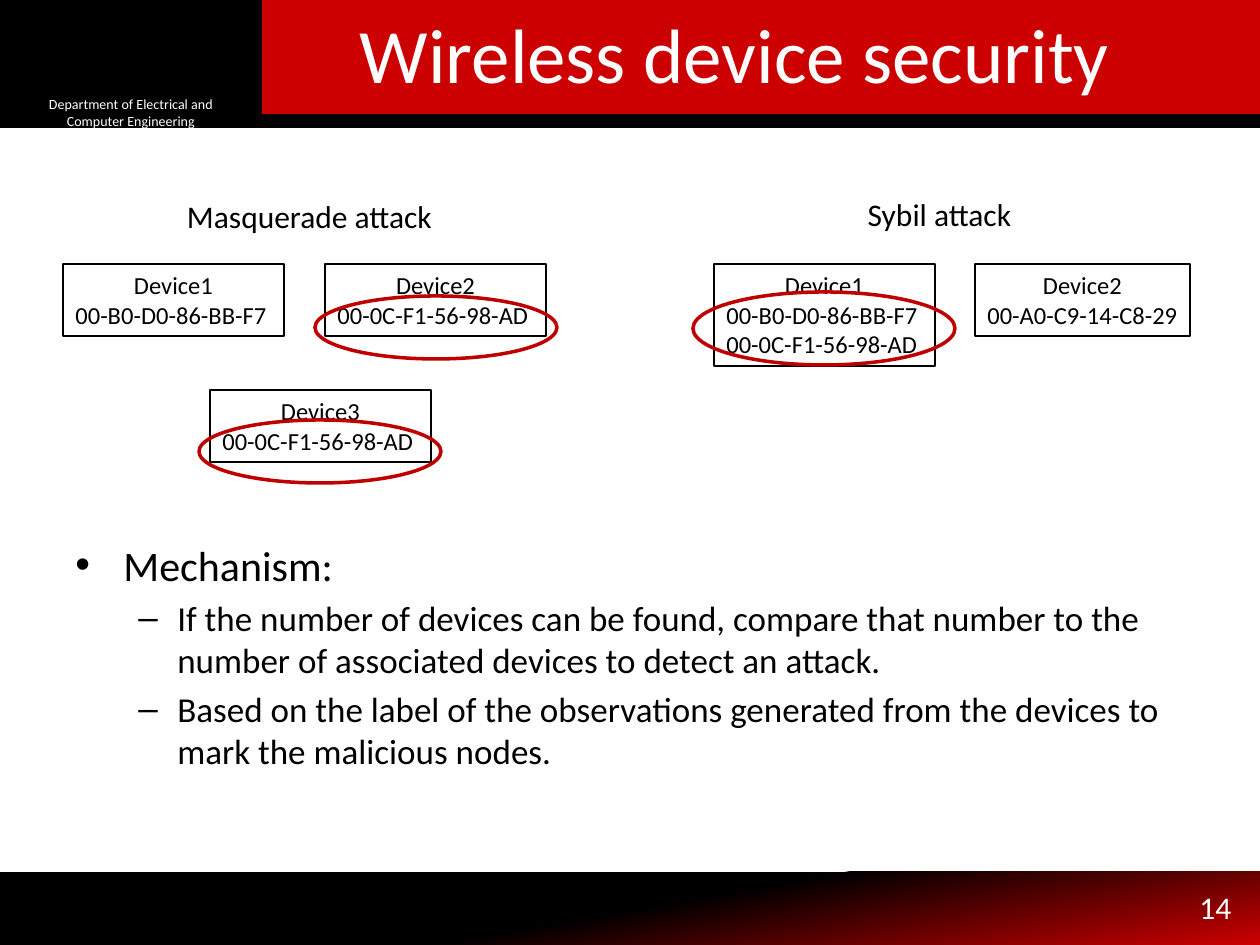
from lxml import etree
from pptx import Presentation
from pptx.dml.color import RGBColor
from pptx.enum import shapes, text
from pptx.oxml import ns
from pptx.util import Emu, Pt

SCALE = 914400 / 126
FONT = "Calibri"
COLORS = {"black": "000000", "white": "FFFFFF", "red": "CC0000", "ring": "C00000"}
RECT = shapes.MSO_SHAPE.RECTANGLE
OVAL = shapes.MSO_SHAPE.OVAL
LEFT, CENTER = text.PP_ALIGN.LEFT, text.PP_ALIGN.CENTER

deck = Presentation()
deck.slide_width = Emu(int(1260 * SCALE))
deck.slide_height = Emu(int(945 * SCALE))
page = deck.slides.add_slide(deck.slide_layouts[6])


def add_shape(kind, area, fill=None, line=None, width=0.75):
    shape = page.shapes.add_shape(kind, *[Emu(int(n * SCALE)) for n in area])
    shape.shadow.inherit = False
    if fill:
        shape.fill.solid()
        shape.fill.fore_color.rgb = RGBColor.from_string(COLORS[fill])
    else:
        shape.fill.background()
    if line:
        shape.line.color.rgb = RGBColor.from_string(COLORS[line])
        shape.line.width = Pt(width)
    else:
        shape.line.fill.background()
    return shape


def write(content, area=None, box=None, size=18, color="black", align=LEFT,
          rest=None, anchor=text.MSO_ANCHOR.TOP, wrap=True):
    if box is None:
        box = page.shapes.add_textbox(*[Emu(int(n * SCALE)) for n in area])
    frame = box.text_frame
    frame.word_wrap = wrap
    frame.vertical_anchor = anchor
    frame.text = content
    for index, para in enumerate(frame.paragraphs):
        para.alignment = align if index == 0 or rest is None else rest
        for span in para.runs:
            span.font.name = FONT
            span.font.size = Pt(size)
            span.font.color.rgb = RGBColor.from_string(COLORS[color])
    return box


footer = add_shape(RECT, (0, 872, 1260, 73))
footer.fill.gradient()
footer.fill.gradient_angle = 280
for stop, position, name in zip(footer.fill.gradient_stops, (0.5, 1), ("black", "red")):
    stop.position = position
    stop.color.rgb = RGBColor.from_string(COLORS[name])

add_shape(RECT, (0, 0, 1260, 126), fill="black", line="black", width=2)
add_shape(RECT, (262, -1, 998, 115), fill="red")
department = add_shape(RECT, (21, 96, 220, 32), fill="black")
write("Department of Electrical and Computer Engineering", box=department, size=8,
      color="white", align=CENTER, anchor=text.MSO_ANCHOR.MIDDLE)
write("Wireless device security", (168, 0, 1134, 158), size=44, color="white", align=CENTER)

points = [
    ("Mechanism:", 24, "•", 48, 48),
    ("If the number of devices can be found, compare that number to the number of "
     "associated devices to detect an attack.", 20, "–", 102, 39),
    ("Based on the label of the observations generated from the devices to mark "
     "the malicious nodes.", 20, "–", 102, 39),
]
body = write("\n".join(point[0] for point in points), (63, 533, 1134, 311))
for index, (para, point) in enumerate(zip(body.text_frame.paragraphs, points)):
    content, size, mark, margin, hang = point
    props = para._p.get_or_add_pPr()
    props.set("marL", str(int(margin * SCALE)))
    props.set("indent", str(int(-hang * SCALE)))
    etree.SubElement(props, ns.qn("a:buFont")).set("typeface", "Arial")
    etree.SubElement(props, ns.qn("a:buChar")).set("char", mark)
    para.level = int(index > 0)
    para.space_before = Pt(size * 0.2 if index else 0)
    para.runs[0].font.size = Pt(size)

devices = [
    ("Device1\n00-B0-D0-86-BB-F7", (63, 264, 221, 72), True),
    ("Device2\n00-0C-F1-56-98-AD", (325, 264, 221, 72), True),
    ("Device3\n00-0C-F1-56-98-AD", (210, 390, 221, 72), True),
    ("Device1\n00-B0-D0-86-BB-F7\n00-0C-F1-56-98-AD", (714, 264, 221, 102), True),
    ("Device2\n00-A0-C9-14-C8-29", (975, 264, 215, 72), False),
]
for content, area, wrap in devices:
    device = add_shape(RECT, area, line="black")
    write(content, box=device, size=14, align=CENTER, rest=LEFT, wrap=wrap)

for area in [(315, 296, 242, 63), (199, 420, 242, 63), (693, 292, 262, 73)]:
    add_shape(OVAL, area, line="ring", width=2)

write("Masquerade attack", (31, 191, 557, 50), align=CENTER)
write("Sybil attack", (661, 189, 557, 50), align=CENTER)
write("14", (1187, 882, 63, 50), color="white")

deck.save("out.pptx")
